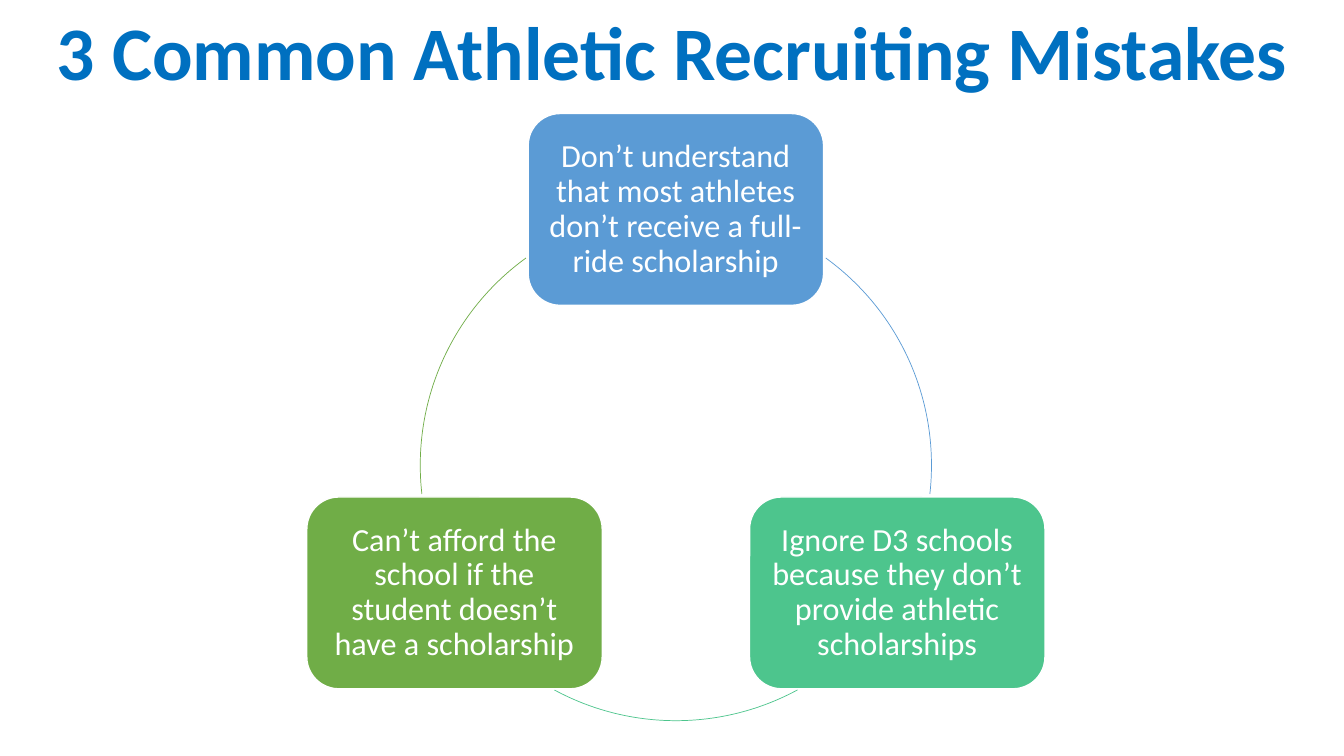
from math import cos, radians, sin

from pptx import Presentation
from pptx.dml.color import RGBColor
from pptx.enum.shapes import MSO_SHAPE
from pptx.enum.text import MSO_ANCHOR, PP_ALIGN
from pptx.util import Pt

CENTER_X, CENTER_Y, RADIUS = 482.8, 332.2, 182.6
CARD_WIDTH, CARD_HEIGHT = 211, 137

# Card text, colour, and the start and end angle of the arc that follows it
MISTAKES = [
    ("Don’t understand that most athletes don’t receive a full-ride scholarship",
     "5B9BD5", 305.9, 6.5),
    ("Ignore D3 schools because they don’t provide athletic scholarships",
     "4DC58D", 61.6, 118.4),
    ("Can’t afford the school if the student doesn’t have a scholarship",
     "70AD47", 173.5, 234.1),
]


def color(hex_string):
    return RGBColor.from_string(hex_string)


class CycleSlide:
    font_name = "Calibri"
    white = "FFFFFF"

    def __init__(self, presentation):
        self.slide = presentation.slides.add_slide(presentation.slide_layouts[6])

    def set_text(self, shape, text, size, text_color, inset, bold=False):
        frame = shape.text_frame
        frame.word_wrap = True
        frame.vertical_anchor = MSO_ANCHOR.MIDDLE
        frame.margin_left = frame.margin_right = Pt(inset)
        frame.margin_top = frame.margin_bottom = Pt(inset)
        paragraph = frame.paragraphs[0]
        paragraph.text = text
        paragraph.alignment = PP_ALIGN.CENTER
        paragraph.line_spacing = 0.9
        font = paragraph.font
        font.name, font.size, font.bold = self.font_name, Pt(size), bold
        font.color.rgb = color(text_color)

    def title(self, text):
        box = self.slide.shapes.add_textbox(Pt(31.7), Pt(0), Pt(897), Pt(80.6))
        box.fill.solid()
        box.fill.fore_color.rgb = color(self.white)
        self.set_text(box, text, 54, "0070C0", 3.6, bold=True)

    def shape(self, kind, left, top, width, height, line_color, line_width):
        shape = self.slide.shapes.add_shape(
            kind, Pt(left), Pt(top), Pt(width), Pt(height))
        shape.shadow.inherit = False
        shape.line.color.rgb = color(line_color)
        shape.line.width = Pt(line_width)
        return shape

    def card(self, text, fill_color, angle):
        """Add a card centred on the circle at an angle in degrees."""
        left = CENTER_X + RADIUS * cos(radians(angle)) - CARD_WIDTH / 2
        top = CENTER_Y + RADIUS * sin(radians(angle)) - CARD_HEIGHT / 2
        card = self.shape(MSO_SHAPE.ROUNDED_RECTANGLE, left, top,
                          CARD_WIDTH, CARD_HEIGHT, self.white, 1)
        card.fill.solid()
        card.fill.fore_color.rgb = color(fill_color)
        self.set_text(card, text, 23, self.white, 7)

    def arc(self, line_color, start, end):
        arc = self.shape(MSO_SHAPE.ARC, CENTER_X - RADIUS, CENTER_Y - RADIUS,
                         2 * RADIUS, 2 * RADIUS, line_color, 0.5)
        arc.fill.background()
        # Adjustments count in 100000ths, angles in 60000ths of a degree
        arc.adjustments[0] = start * 0.6
        arc.adjustments[1] = end * 0.6


def main():
    presentation = Presentation()
    presentation.slide_width, presentation.slide_height = Pt(960), Pt(540)
    slide = CycleSlide(presentation)
    slide.title("3 Common Athletic Recruiting Mistakes")
    for index, (text, accent, start, end) in enumerate(MISTAKES):
        slide.card(text, accent, -90 + index * 360 / len(MISTAKES))
        slide.arc(accent, start, end)
    presentation.save("out.pptx")


if __name__ == "__main__":
    main()
